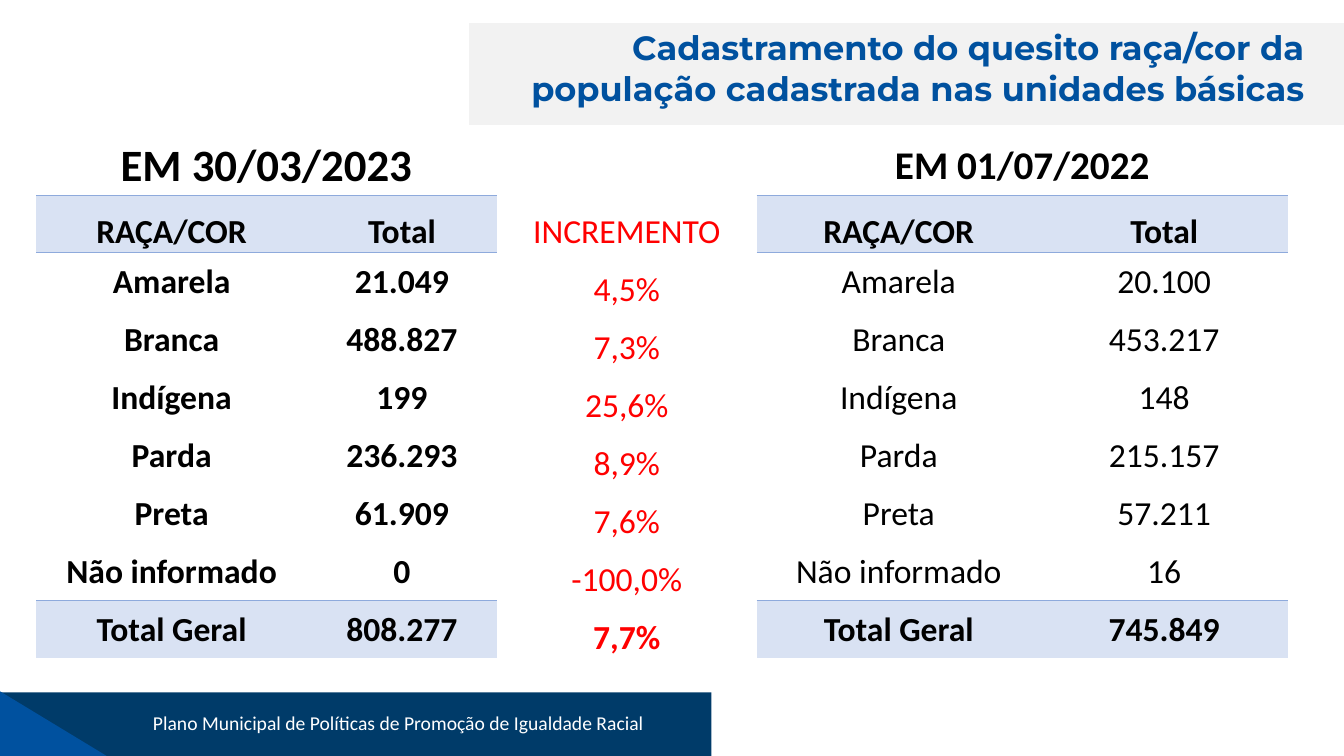
from lxml.etree import SubElement
from pptx import Presentation
from pptx.dml.color import RGBColor
from pptx.enum.shapes import MSO_SHAPE as Shape
from pptx.enum.text import MSO_ANCHOR as Anchor, MSO_AUTO_SIZE as AutoSize, PP_ALIGN as Align
from pptx.oxml.ns import qn
from pptx.util import Cm, Pt

TITLE = "Cadastramento do quesito raça/cor da população cadastrada nas unidades básicas"
FOOTER = "Plano Municipal de Políticas de Promoção de Igualdade Racial"
ROWS = [
    ("EM 30/03/2023", "", "", "EM 01/07/2022", ""),
    ("RAÇA/COR", "Total", "INCREMENTO", "RAÇA/COR", "Total"),
    ("Amarela", "21.049", "4,5%", "Amarela", "20.100"),
    ("Branca", "488.827", "7,3%", "Branca", "453.217"),
    ("Indígena", "199", "25,6%", "Indígena", "148"),
    ("Parda", "236.293", "8,9%", "Parda", "215.157"),
    ("Preta", "61.909", "7,6%", "Preta", "57.211"),
    ("Não informado", "0", "-100,0%", "Não informado", "16"),
    ("Total Geral", "808.277", "7,7%", "Total Geral", "745.849"),
]
COLORS = {
    "navy": "003B69", "blue": "00519F", "gray": "F2F2F2", "white": "FFFFFF",
    "black": "000000", "red": "FF0000", "band": "D9E2F3", "rule": "8EAADC",
}
PANELS = [
    (Shape.RECTANGLE, "navy", (0, 17.45, 17.93, 1.62)),
    (Shape.RIGHT_TRIANGLE, "blue", (0, 17.42, 2.69, 1.63)),
    (Shape.FLOWCHART_PROCESS, "gray", (11.82, 0.58, 22.05, 2.56)),
]
TITLE_PLACE = (11.76, 0.56, 21.36, 2.31)
FOOTER_PLACE = (2.26, 17.4, 15.57, 1.63)
COLUMN_WIDTHS = (6.83, 4.78, 6.55, 7.16, 6.22)
ROW_HEIGHT = 1.46
TABLE_CORNER = (0.91, 3.45)
DATE, HEADER, TOTAL = 0, 1, len(ROWS) - 1
INCREMENT = 2
RULED_EDGES = (HEADER, HEADER + 1, TOTAL)
DATE_SIZES = {0: 32, 3: 28}


def rgb(name):
    return RGBColor.from_string(COLORS[name])


def set_all(target, **values):
    for name, value in values.items():
        setattr(target, name, value)


def write(frame, text, align, size, color, font="Calibri", bold=False):
    para = frame.paragraphs[0]
    para.alignment = align
    span = para.add_run()
    span.text = text
    set_all(span.font, name=font, size=Pt(size), bold=bold)
    span.font.color.rgb = rgb(color)


def place(shape, bounds):
    set_all(shape, **dict(zip(("left", "top", "width", "height"), map(Cm, bounds))))


def draw_borders(cell, row, column):
    ruled = {"lnT": row in RULED_EDGES, "lnB": row + 1 in RULED_EDGES}
    properties = cell._tc.get_or_add_tcPr()
    for side in ("lnL", "lnR", "lnT", "lnB"):
        line = SubElement(properties, qn(f"a:{side}"), w=str(Pt(0.5)))
        if ruled.get(side) and column != INCREMENT:
            fill = SubElement(line, qn("a:solidFill"))
            SubElement(fill, qn("a:srgbClr"), val=COLORS["rule"])
        else:
            SubElement(line, qn("a:noFill"))


def cell_fill(row, column):
    if column == INCREMENT:
        return "white" if row > HEADER else None
    return {DATE: "white", HEADER: "band", TOTAL: "band"}.get(row)


def fill_cell(cell, text, row, column):
    middle = column == INCREMENT
    draw_borders(cell, row, column)
    color = cell_fill(row, column)
    if color:
        cell.fill.solid()
        cell.fill.fore_color.rgb = rgb(color)
    else:
        cell.fill.background()
    low = row == HEADER or middle
    set_all(cell, margin_left=Cm(0.03), margin_right=Cm(0.03), margin_top=Cm(0.03),
            margin_bottom=0, vertical_anchor=Anchor.BOTTOM if low else Anchor.MIDDLE)
    if text:
        bold = column < INCREMENT or row == TOTAL or (row <= HEADER and not middle)
        size = DATE_SIZES[column] if row == DATE else 24
        write(cell.text_frame, text, Align.CENTER, size, "red" if middle else "black", bold=bold)


def add_race_table(page):
    size = (sum(COLUMN_WIDTHS), ROW_HEIGHT * len(ROWS))
    frame = page.shapes.add_table(len(ROWS), len(COLUMN_WIDTHS), *map(Cm, TABLE_CORNER + size))
    table = frame.table
    set_all(table, first_row=False, horz_banding=False)
    for column, width in zip(table.columns, COLUMN_WIDTHS):
        column.width = Cm(width)
    for row in table.rows:
        row.height = Cm(ROW_HEIGHT)
    for row, texts in enumerate(ROWS):
        for column, text in enumerate(texts):
            fill_cell(table.cell(row, column), text, row, column)
    for column in DATE_SIZES:
        table.cell(DATE, column).merge(table.cell(DATE, column + 1))


def main():
    deck = Presentation()
    set_all(deck, slide_width=Cm(33.87), slide_height=Cm(19.05))
    page = deck.slides.add_slide(deck.slide_layouts[5])

    for kind, color, bounds in PANELS:
        panel = page.shapes.add_shape(kind, *map(Cm, bounds))
        panel.shadow.inherit = False
        panel.fill.solid()
        panel.fill.fore_color.rgb = rgb(color)
        panel.line.fill.background()

    title = page.shapes.title
    panel.element.addnext(title.element)
    place(title, TITLE_PLACE)
    set_all(title.text_frame, word_wrap=True, vertical_anchor=Anchor.TOP, auto_size=AutoSize.NONE)
    write(title.text_frame, TITLE, Align.RIGHT, 24, "blue", "Montserrat", True)

    footer = page.shapes.add_textbox(*map(Cm, FOOTER_PLACE))
    set_all(footer.text_frame, word_wrap=True, vertical_anchor=Anchor.MIDDLE)
    write(footer.text_frame, FOOTER, Align.CENTER, 14, "white")

    add_race_table(page)
    deck.save("out.pptx")


if __name__ == "__main__":
    main()
